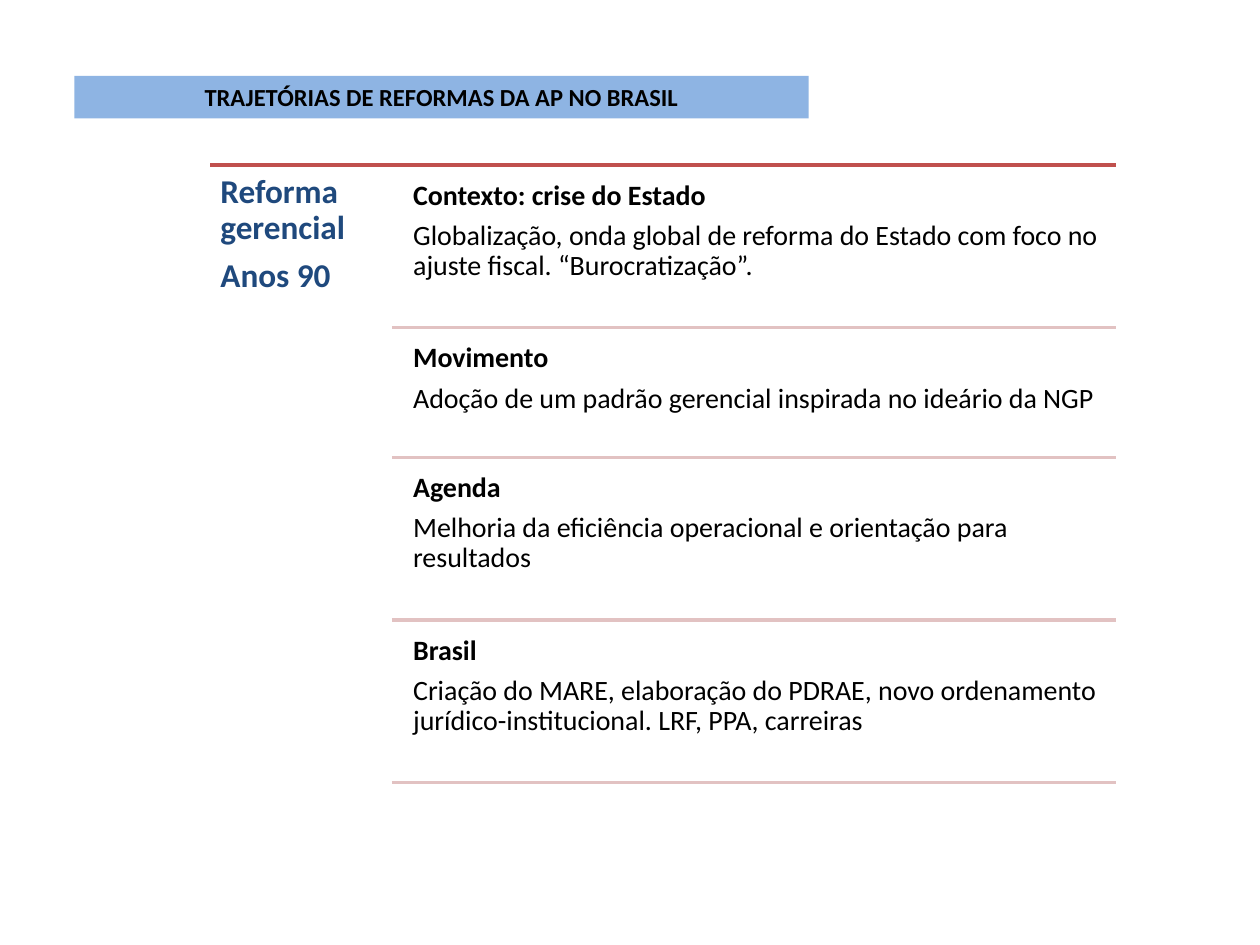
from lxml import etree
from pptx import Presentation
from pptx.dml.color import RGBColor
from pptx.enum import shapes, text
from pptx.oxml.ns import qn
from pptx.util import Pt

TITLE = "TRAJETÓRIAS DE REFORMAS DA AP NO BRASIL"
PERIOD = ["Reforma gerencial", "Anos 90"]
# heading, description, height of the text box
SECTIONS = [
    ("Contexto: crise do Estado",
     "Globalização, onda global de reforma do Estado com foco no ajuste fiscal. “Burocratização”.", 88.6),
    ("Movimento",
     "Adoção de um padrão gerencial inspirada no ideário da NGP", 69.8),
    ("Agenda",
     "Melhoria da eficiência operacional e orientação para resultados", 88.6),
    ("Brasil",
     "Criação do MARE, elaboração do PDRAE, novo ordenamento jurídico-institucional. LRF, PPA, carreiras", 88.6),
]
LEFT, RIGHT, TOP = 120.2, 638, 94.3
RULE_LEFT, TEXT_LEFT, GAP = 224, 231.1, 4.3
TITLE_FONT = {"name": "Calibri", "size": Pt(14), "bold": True}
PERIOD_FONT = {"name": "Calibri", "size": Pt(19), "bold": True}
HEADING_FONT = {"name": "Calibri", "size": Pt(16), "bold": True}
BODY_FONT = {**HEADING_FONT, "bold": False}


def color(value):
    return RGBColor.from_string(value)


def add_span(para, words, font, ink):
    span = para.add_run()
    span.text = words
    for name, value in font.items():
        setattr(span.font, name, value)
    span.font.color.rgb = color(ink)


def add_text(slide, place, inset, lines, ink):
    """Add a text box; lines holds (words, font) for each paragraph."""
    frame = slide.shapes.add_textbox(*map(Pt, place)).text_frame
    frame.word_wrap = True
    for side in ("left", "top", "right", "bottom"):
        setattr(frame, f"margin_{side}", Pt(inset))
    for index, (words, font) in enumerate(lines):
        para = frame.add_paragraph() if index else frame.paragraphs[0]
        para.line_spacing = 0.9
        para.space_after = Pt(round(font["size"].pt * 0.35, 2))
        add_span(para, words, font, ink)


def add_rule(slide, left, y, ink):
    rule = slide.shapes.add_connector(
        shapes.MSO_CONNECTOR.STRAIGHT, Pt(left), Pt(y), Pt(RIGHT), Pt(y))
    rule.line.color.rgb = color(ink)
    rule.line.width = Pt(2)
    etree.SubElement(rule.element.spPr, qn("a:effectLst"))


def add_title(slide):
    bar = slide.shapes.add_shape(
        shapes.MSO_SHAPE.RECTANGLE, Pt(42.5), Pt(43.3), Pt(419.7), Pt(24.3))
    bar.shadow.inherit = False
    bar.fill.solid()
    bar.fill.fore_color.rgb = color("8EB4E3")
    bar.line.fill.background()
    frame = bar.text_frame
    frame.word_wrap = True
    frame.vertical_anchor = text.MSO_ANCHOR.TOP
    para = frame.paragraphs[0]
    para.alignment = text.PP_ALIGN.CENTER
    add_span(para, TITLE, TITLE_FONT, "000000")


def main():
    deck = Presentation()
    deck.slide_width, deck.slide_height = Pt(720), Pt(540)
    slide = deck.slides.add_slide(deck.slide_layouts[6])

    add_rule(slide, LEFT, TOP, "C0504D")
    add_text(slide, (LEFT, TOP, 103.7, 357), 5.8,
             [(line, PERIOD_FONT) for line in PERIOD], "1F497D")
    y = TOP
    for heading, body, height in SECTIONS:
        y += GAP
        add_text(slide, (TEXT_LEFT, y, RIGHT - TEXT_LEFT, height), 5,
                 [(heading, HEADING_FONT), (body, BODY_FONT)], "000000")
        y += height
        add_rule(slide, RULE_LEFT, y, "E2C2C2")
    add_title(slide)
    deck.save("out.pptx")


if __name__ == "__main__":
    main()
